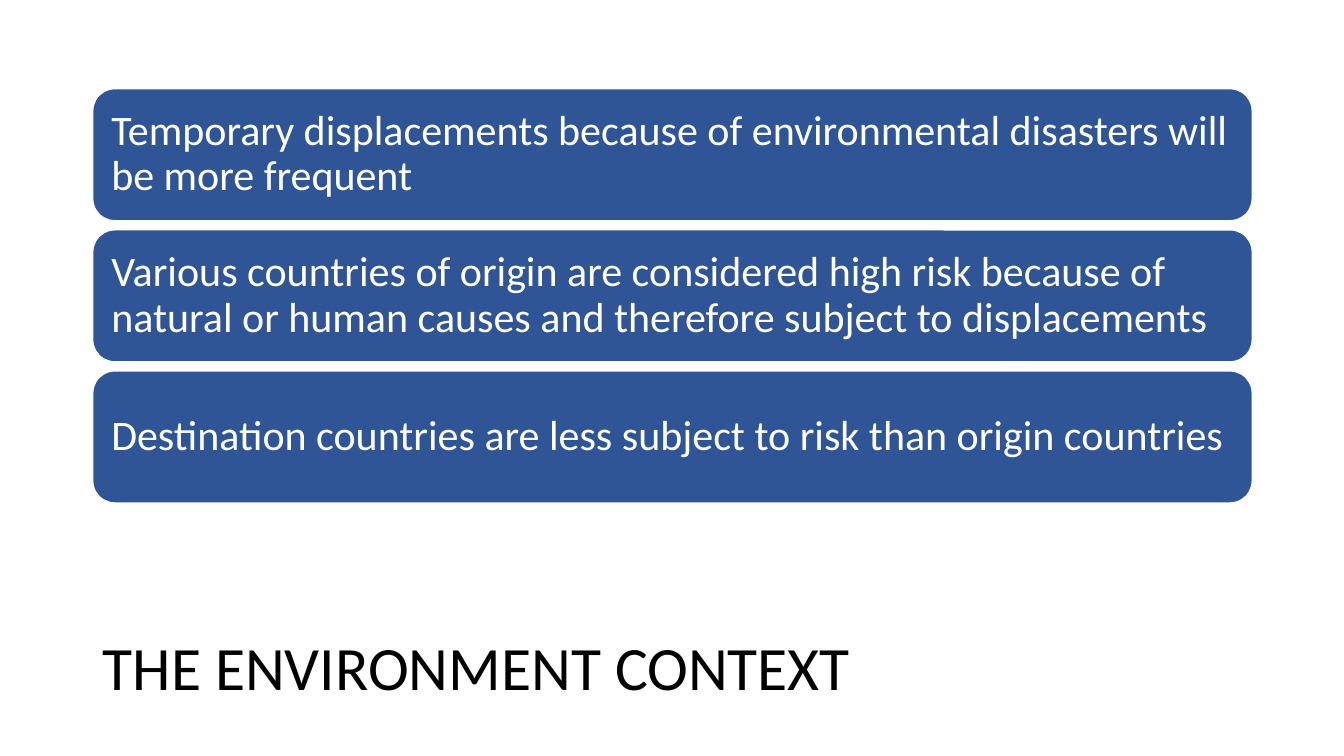
from pptx import Presentation
from pptx.dml.color import RGBColor
from pptx.enum.shapes import MSO_SHAPE as Shape
from pptx.enum.text import MSO_ANCHOR as Anchor, PP_ALIGN as Align
from pptx.util import Inches, Pt

TITLE = "THE ENVIRONMENT CONTEXT"
STATEMENTS = [
    "Temporary displacements because of environmental disasters will be more frequent",
    "Various countries of origin are considered high risk because of natural or human "
    "causes and therefore subject to displacements",
    "Destination countries are less subject to risk than origin countries",
]

BLUE = RGBColor(0x2F, 0x55, 0x97)
WHITE = RGBColor(0xFF, 0xFF, 0xFF)
BLACK = RGBColor(0x00, 0x00, 0x00)
FONT = "Calibri"

WIDTH, HEIGHT = 13.33, 7.5
MARGIN = 0.92
BAR_TOP, BAR_WIDTH, BAR_HEIGHT, BAR_STEP = 0.88, 11.5, 1.31, 1.4
BAR_INSET = 0.12


def write(box, text, size, color):
    """Fill a box with one left-aligned, vertically centred paragraph."""
    frame = box.text_frame
    frame.word_wrap = True
    frame.vertical_anchor = Anchor.MIDDLE
    frame.text = text
    para = frame.paragraphs[0]
    para.alignment = Align.LEFT
    para.line_spacing = 0.9
    font = para.runs[0].font
    font.name, font.size, font.color.rgb = FONT, Pt(size), color


def add_bar(page, row, text):
    bar = page.shapes.add_shape(
        Shape.ROUNDED_RECTANGLE, Inches(MARGIN), Inches(BAR_TOP + row * BAR_STEP),
        Inches(BAR_WIDTH), Inches(BAR_HEIGHT))
    bar.shadow.inherit = False
    bar.fill.solid()
    bar.fill.fore_color.rgb = BLUE
    bar.line.color.rgb = WHITE
    bar.line.width = Pt(1)
    frame = bar.text_frame
    frame.margin_left = frame.margin_right = Inches(BAR_INSET)
    frame.margin_top = frame.margin_bottom = Inches(BAR_INSET)
    write(bar, text, 30, WHITE)


def main():
    deck = Presentation()
    deck.slide_width, deck.slide_height = Inches(WIDTH), Inches(HEIGHT)
    page = deck.slides.add_slide(deck.slide_layouts[6])
    title = page.shapes.add_textbox(
        Inches(MARGIN), Inches(6.05), Inches(8.44), Inches(1.2))
    write(title, TITLE, 44, BLACK)
    for row, statement in enumerate(STATEMENTS):
        add_bar(page, row, statement)
    deck.save("out.pptx")


if __name__ == "__main__":
    main()
